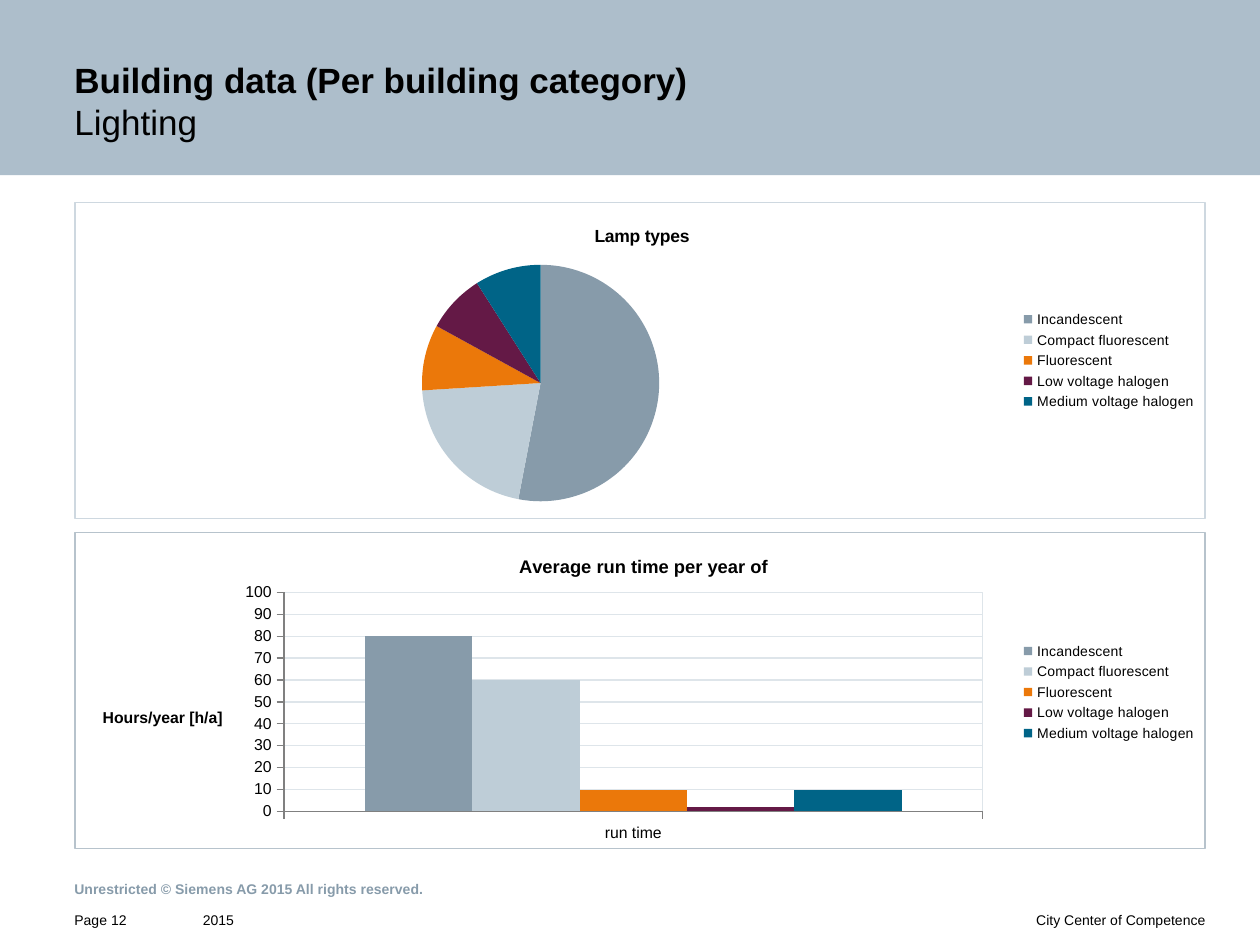
from lxml import etree
from pptx import Presentation
from pptx.chart.data import CategoryChartData
from pptx.dml.color import RGBColor
from pptx.enum.chart import XL_CHART_TYPE, XL_LEGEND_POSITION, XL_TICK_MARK
from pptx.enum.shapes import MSO_SHAPE
from pptx.enum.text import MSO_ANCHOR, PP_ALIGN
from pptx.oxml import parse_xml
from pptx.oxml.ns import nsdecls, qn
from pptx.util import Inches, Pt

FONT = "Arial"
BLACK = RGBColor(0x00, 0x00, 0x00)
BAND = RGBColor(0xAD, 0xBE, 0xCB)
SLATE = RGBColor(0x87, 0x9B, 0xAA)
MIST = RGBColor(0xBE, 0xCD, 0xD7)
ORANGE = RGBColor(0xEB, 0x78, 0x0A)
PLUM = RGBColor(0x64, 0x19, 0x46)
PETROL = RGBColor(0x00, 0x64, 0x87)
GRID = RGBColor(0xDE, 0xE5, 0xEA)
AXIS = RGBColor(0x80, 0x80, 0x80)
PIE_BORDER = RGBColor(0xCE, 0xD8, 0xE0)
COLUMN_BORDER = RGBColor(0xB7, 0xC3, 0xCC)

# Lamp type: colour, share, hours per year
LAMPS = {
    "Incandescent": (SLATE, 53, 80),
    "Compact fluorescent": (MIST, 21, 60),
    "Fluorescent": (ORANGE, 9, 10),
    "Low voltage halogen": (PLUM, 8, 2),
    "Medium voltage halogen": (PETROL, 9, 10),
}
CHART_LEFT, CHART_WIDTH, CHART_HEIGHT = 0.59, 8.98, 2.52


def format_font(font, size, color=BLACK, bold=False):
    for name, value in {"name": FONT, "size": Pt(size), "bold": bold}.items():
        setattr(font, name, value)
    font.color.rgb = color


def format_frame(text_frame, margins, anchor):
    left, top, right, bottom = map(Inches, margins)
    values = {"word_wrap": True, "vertical_anchor": anchor,
              "margin_left": left, "margin_top": top,
              "margin_right": right, "margin_bottom": bottom}
    for name, value in values.items():
        setattr(text_frame, name, value)


def add_band(slide):
    band = slide.shapes.add_shape(MSO_SHAPE.RECTANGLE, 0, 0, Inches(10), Inches(1.39))
    band.shadow.inherit = False
    band.fill.solid()
    band.fill.fore_color.rgb = BAND
    band.line.fill.background()


def fill_title(slide, heading, subheading):
    title = slide.shapes.title
    slide.shapes._spTree.append(title._element)  # in front of the band
    title.left, title.top = Inches(0), Inches(0)
    title.width, title.height = Inches(10), Inches(1.39)
    format_frame(title.text_frame, (0.59, 0.43, 2.32, 0.26), MSO_ANCHOR.BOTTOM)
    paragraph = title.text_frame.paragraphs[0]
    paragraph.alignment = PP_ALIGN.LEFT
    for text, bold in ((heading, True), (subheading, False)):
        run = paragraph.add_run()
        run.text = text
        format_font(run.font, 20, bold=bold)
        if bold:
            paragraph.add_line_break()


def add_footer(slide, text, box, margins, align=PP_ALIGN.LEFT, color=BLACK,
               bold=False, spacing=1.1, anchor=MSO_ANCHOR.TOP):
    shape = slide.shapes.add_textbox(*map(Inches, box))
    format_frame(shape.text_frame, margins, anchor)
    paragraph = shape.text_frame.paragraphs[0]
    paragraph.alignment = align
    paragraph.line_spacing = spacing
    run = paragraph.add_run()
    run.text = text
    format_font(run.font, 8, color, bold)


def set_layout(element, x, y, width=None, height=None, inner=False):
    """Place a chart part by fractions of the chart area."""
    for old in element.findall(qn("c:layout")):
        element.remove(old)
    layout = parse_xml(f"<c:layout {nsdecls('c')}><c:manualLayout/></c:layout>")
    settings = {"layoutTarget": "inner" if inner else None,
                "xMode": "edge", "yMode": "edge",
                "x": x, "y": y, "w": width, "h": height}
    for name, value in settings.items():
        if value is not None:
            etree.SubElement(layout[0], qn(f"c:{name}")).set("val", str(value))
    before = [child for child in element if child.tag in (qn("c:tx"), qn("c:legendPos"))]
    element.insert(element.index(before[0]) + 1 if before else 0, layout)


def set_chart_title(owner_title, text, size, x, y):
    frame = owner_title.text_frame
    frame.text = text
    format_font(frame.paragraphs[0].runs[0].font, size, bold=True)
    set_layout(owner_title._element, x, y)
    return frame


def add_framed_chart(slide, kind, data, top, size, border, title, plot, legend):
    frame = slide.shapes.add_chart(kind, Inches(CHART_LEFT), Inches(top),
                                   Inches(CHART_WIDTH), Inches(CHART_HEIGHT), data)
    chart = frame.chart
    format_font(chart.font, size)
    chart.has_title = True
    set_chart_title(chart.chart_title, *title)
    chart.has_legend = True
    chart.legend.position = XL_LEGEND_POSITION.RIGHT
    chart.legend.include_in_layout = False
    format_font(chart.legend.font, 8)
    set_layout(chart.legend._element, *legend)
    space = chart._chartSpace
    set_layout(space.chart.plotArea, *plot, inner=True)
    # Frame around the whole chart
    space.chart.addnext(parse_xml(
        f"<c:spPr {nsdecls('c', 'a')}><a:noFill/><a:ln w='{Pt(0.75)}'><a:solidFill>"
        f"<a:srgbClr val='{border}'/></a:solidFill></a:ln></c:spPr>"))
    return chart


def color_part(part, color):
    part.format.fill.solid()
    part.format.fill.fore_color.rgb = color


def format_line(line, color):
    line.color.rgb = color
    line.width = Pt(0.75)


def add_lamp_pie(slide):
    data = CategoryChartData()
    data.categories = list(LAMPS)
    data.add_series("Series 1", [share for _, share, _ in LAMPS.values()])
    chart = add_framed_chart(slide, XL_CHART_TYPE.PIE, data, 1.6, 8, PIE_BORDER,
                             ("Lamp types", 10, 0.457, 0.06),
                             (0.307, 0.198, 0.21, 0.748), (0.83, 0.33, 0.17, 0.34))
    points = chart.plots[0].series[0].points
    for index, (color, _, _) in enumerate(LAMPS.values()):
        color_part(points[index], color)


def add_run_time_columns(slide):
    data = CategoryChartData()
    data.categories = ["run time"]
    for lamp, (_, _, hours) in LAMPS.items():
        data.add_series(lamp, [hours])
    chart = add_framed_chart(slide, XL_CHART_TYPE.COLUMN_CLUSTERED, data, 4.22, 9,
                             COLUMN_BORDER,
                             ("Average run time per year of", 10.5, 0.39, 0.06),
                             (0.185, 0.19, 0.618, 0.693), (0.83, 0.335, 0.17, 0.34))
    plot = chart.plots[0]
    plot.vary_by_categories = False
    plot.gap_width, plot.overlap = 150, 0
    for series, (color, _, _) in zip(plot.series, LAMPS.values()):
        color_part(series, color)
    # Axes and grid
    hours_axis = chart.value_axis
    for name, value in {"minimum_scale": 0, "maximum_scale": 100, "major_unit": 10,
                        "has_major_gridlines": True, "has_title": True}.items():
        setattr(hours_axis, name, value)
    for axis in (hours_axis, chart.category_axis):
        axis.major_tick_mark = XL_TICK_MARK.OUTSIDE
        format_line(axis.format.line, AXIS)
    format_line(hours_axis.major_gridlines.format.line, GRID)
    label = set_chart_title(hours_axis.axis_title, "Hours/year [h/a]", 9, 0.022, 0.545)
    body = label._txBody.bodyPr
    body.set("rot", "0")
    body.set("vert", "horz")
    # Outline of the plot area
    chart._chartSpace.chart.plotArea.append(parse_xml(
        f"<c:spPr {nsdecls('c', 'a')}><a:noFill/><a:ln w='{Pt(0.75)}'><a:solidFill>"
        f"<a:srgbClr val='{GRID}'/></a:solidFill></a:ln></c:spPr>"))


def main():
    presentation = Presentation()
    presentation.slide_width, presentation.slide_height = Inches(10), Inches(7.5)
    slide = presentation.slides.add_slide(presentation.slide_layouts[5])

    # Header and footer
    add_band(slide)
    add_footer(slide, "2015", (0, 7.22, 3.1, 0.28), (1.61, 0, 0, 0.13))
    add_footer(slide, "Unrestricted © Siemens AG 2015 All rights reserved.",
               (0, 6.74, 10, 0.47), (0.59, 0.16, 2.32, 0), color=SLATE, bold=True,
               spacing=1.0, anchor=MSO_ANCHOR.MIDDLE)
    add_footer(slide, "Page 12", (0, 7.22, 1.52, 0.28), (0.59, 0, 0, 0.13))
    add_footer(slide, "City Center of Competence", (2.95, 7.22, 7.05, 0.28),
               (0, 0, 0.43, 0.13), align=PP_ALIGN.RIGHT)
    fill_title(slide, "Building data (Per building category)", "Lighting")

    # Charts
    add_lamp_pie(slide)
    add_run_time_columns(slide)
    presentation.save("out.pptx")


if __name__ == "__main__":
    main()
